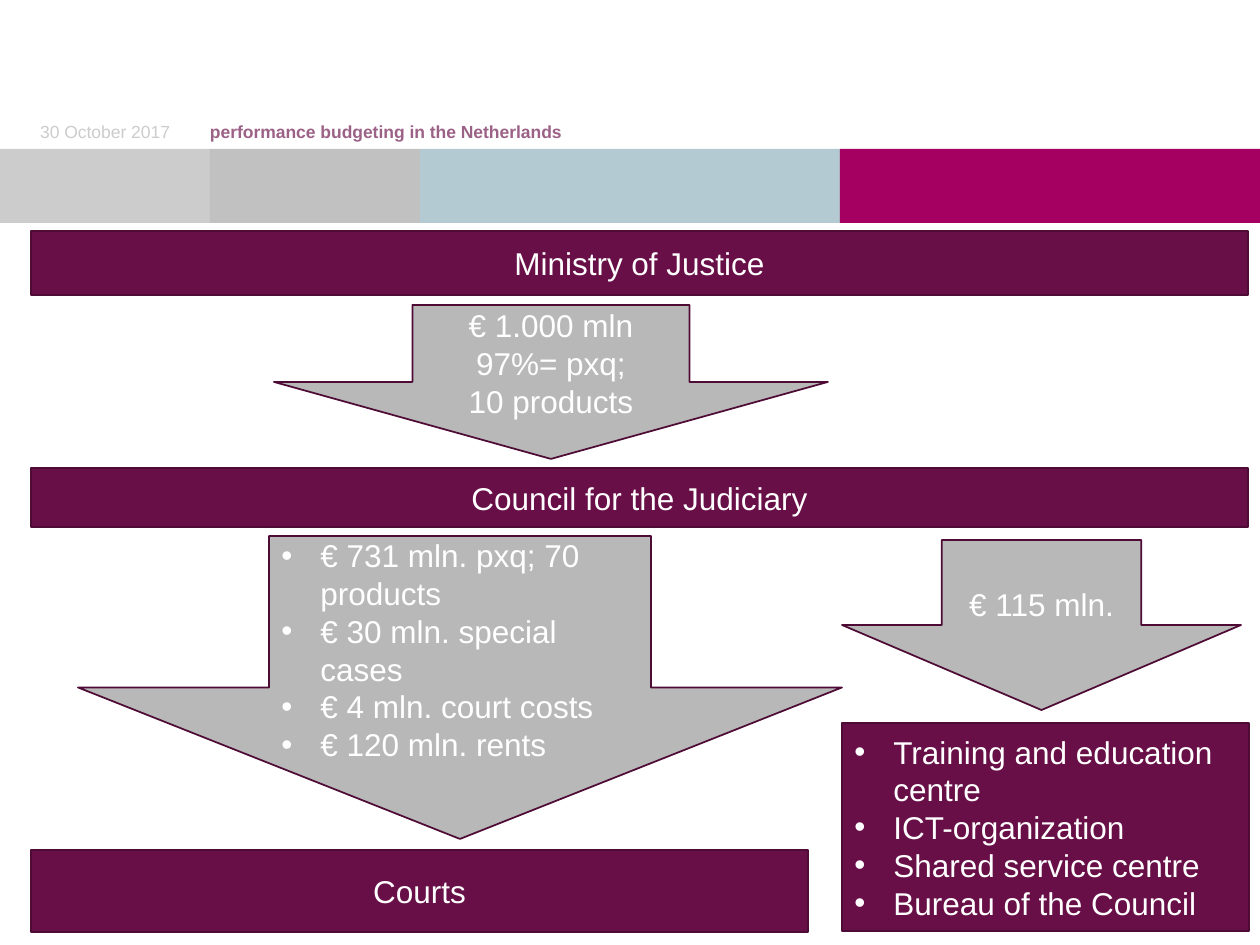
"""Build the slide on performance budgeting in the Netherlands."""
from pptx import Presentation
from pptx.dml.color import RGBColor
from pptx.enum.shapes import MSO_SHAPE as Shape
from pptx.enum.text import MSO_ANCHOR as Anchor, PP_ALIGN as Align
from pptx.oxml.ns import qn
from pptx.util import Pt
from lxml.etree import SubElement

PX = 914400 / 126
PLUM, EDGE, GREY, WHITE = "680F48", "4D0B35", "B8B8B8", "FFFFFF"
BULLET_INDENT = 39


def emu(*lengths):
    return [round(length * PX) for length in lengths]


def rgb(color):
    return RGBColor.from_string(color)


deck = Presentation()
deck.slide_width, deck.slide_height = emu(1260, 945)
slide = deck.slides.add_slide(deck.slide_layouts[6])

bands = [(0, 210, "CCCCCC"), (210, 210, "C1C1C1"), (420, 420, "B4CAD2"), (840, 420, "A50061")]
for left, width, color in bands:
    band = slide.shapes.add_shape(Shape.RECTANGLE, *emu(left, 149, width, 74))
    band.shadow.inherit = False
    band.fill.solid()
    band.fill.fore_color.rgb = rgb(color)
    band.line.fill.background()

captions = [
    (0, 210, "30 October 2017", "CCCCCC", False, Align.CENTER),
    (210, 840, "performance budgeting in the Netherlands", "9C6186", True, Align.LEFT),
]
for left, width, wording, color, bold, align in captions:
    caption = slide.shapes.add_textbox(*emu(left, 118, width, 24)).text_frame
    caption.word_wrap = True
    caption.vertical_anchor = Anchor.BOTTOM
    caption.margin_left = caption.margin_right = caption.margin_top = caption.margin_bottom = 0
    line = caption.paragraphs[0]
    line.text = wording
    line.alignment = align
    line.font.name, line.font.size, line.font.bold = "Arial", Pt(10), bold
    line.font.color.rgb = rgb(color)

bodies = [
    (Shape.RECTANGLE, 31, 231, 1217, 64, PLUM, False, ["Ministry of Justice"]),
    (Shape.RECTANGLE, 31, 850, 777, 82, PLUM, False, ["Courts"]),
    (Shape.RECTANGLE, 31, 468, 1217, 59, PLUM, False, ["Council for the Judiciary"]),
    (Shape.RECTANGLE, 842, 723, 407, 208, PLUM, True,
     ["Training and education centre", "ICT-organization", "Shared service centre", "Bureau of the Council"]),
    (Shape.DOWN_ARROW, 274, 305, 554, 154, GREY, False, ["€ 1.000 mln", "97%= pxq;", "10 products"]),
    (Shape.DOWN_ARROW, 842, 540, 399, 170, GREY, False, ["€ 115 mln."]),
    (Shape.DOWN_ARROW, 78, 536, 764, 303, GREY, True,
     ["€ 731 mln. pxq; 70 products", "€ 30 mln. special cases", "€ 4 mln. court costs", "€ 120 mln. rents"]),
]
for outline, left, top, width, height, color, bulleted, lines in bodies:
    body = slide.shapes.add_shape(outline, *emu(left, top, width, height))
    body.shadow.inherit = False
    body.fill.solid()
    body.fill.fore_color.rgb = rgb(color)
    body.line.color.rgb = rgb(EDGE)
    body.line.width = Pt(1)
    frame = body.text_frame
    frame.word_wrap = True
    frame.vertical_anchor = Anchor.MIDDLE
    for index, wording in enumerate(lines):
        line = frame.add_paragraph() if index else frame.paragraphs[0]
        line.text = wording
        line.alignment = Align.LEFT if bulleted else Align.CENTER
        if bulleted:
            indent, = emu(BULLET_INDENT)
            properties = line._p.get_or_add_pPr()
            properties.set("marL", str(indent))
            properties.set("indent", str(-indent))
            SubElement(properties, qn("a:buFont"), typeface="Arial")
            SubElement(properties, qn("a:buChar"), char="•")
        line.font.name, line.font.size = "Arial", Pt(18)
        line.font.color.rgb = rgb(WHITE)

deck.save("out.pptx")
